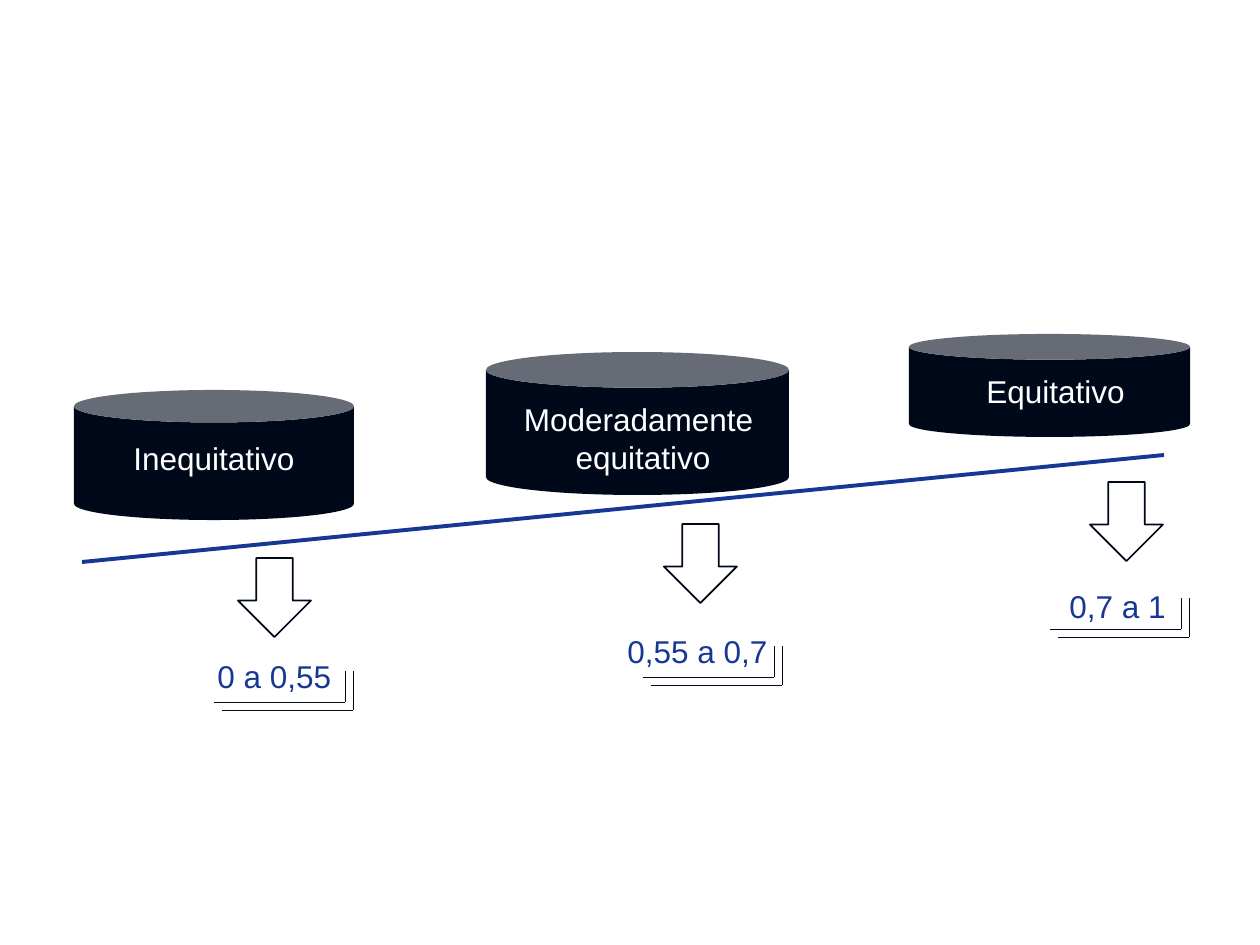
from lxml.etree import SubElement
from pptx import Presentation
from pptx.dml.color import RGBColor
from pptx.enum.shapes import MSO_CONNECTOR as CONNECTOR, MSO_SHAPE as SHAPE
from pptx.enum.text import MSO_ANCHOR as ANCHOR, PP_ALIGN as ALIGN
from pptx.oxml.ns import qn
from pptx.util import Pt

SCALE = 914400 / 126
NAVY = RGBColor(0x00, 0x09, 0x1A)
BLUE = RGBColor(0x16, 0x37, 0x94)
WHITE = RGBColor(0xFF, 0xFF, 0xFF)

presentation = Presentation()
presentation.slide_width = round(1260 * SCALE)
presentation.slide_height = round(945 * SCALE)
slide = presentation.slides.add_slide(presentation.slide_layouts[6])


def add_text(box, lines, color, align, wrap=True):
    text_box = slide.shapes.add_textbox(*[round(px * SCALE) for px in box])
    frame = text_box.text_frame
    frame.word_wrap = wrap
    frame.vertical_anchor = ANCHOR.TOP
    frame.text = "\n".join(lines)
    for paragraph in frame.paragraphs:
        paragraph.alignment = align
        paragraph.font.name = "Arial"
        paragraph.font.size = Pt(18)
        paragraph.font.color.rgb = color


def add_line(ends, color, width):
    line = slide.shapes.add_connector(
        CONNECTOR.STRAIGHT, *[round(px * SCALE) for px in ends])
    line.line.color.rgb = color
    line.line.width = Pt(width)
    SubElement(line._element.spPr, qn("a:effectLst"))


cans = [(909, 334, 281, 103), (486, 352, 303, 143), (74, 390, 280, 130)]
for box in cans:
    can = slide.shapes.add_shape(SHAPE.CAN, *[round(px * SCALE) for px in box])
    can.shadow.inherit = False
    can.fill.solid()
    can.fill.fore_color.rgb = NAVY
    can.line.fill.background()

levels = [
    ((120, 433, 188, 50), ["Inequitativo"], False),
    ((973, 366, 165, 50), ["Equitativo"], False),
    ((510, 394, 266, 89), ["Moderadamente ", "equitativo"], True),
]
for box, lines, wrap in levels:
    add_text(box, lines, WHITE, ALIGN.CENTER, wrap)

add_line((82, 562, 1164, 455), BLUE, 2.25)

for left, top in [(238, 558), (664, 524), (1090, 482)]:
    arrow = slide.shapes.add_shape(
        SHAPE.DOWN_ARROW, *[round(px * SCALE) for px in (left, top, 73, 79)])
    arrow.shadow.inherit = False
    arrow.fill.solid()
    arrow.fill.fore_color.rgb = WHITE
    arrow.line.color.rgb = NAVY
    arrow.line.width = Pt(1)

ranges = [
    ("0 a 0,55", (205, 651, 170, 50), 345, 702),
    ("0,55 a 0,7", (615, 626, 189, 50), 774, 677),
    ("0,7 a 1", (1057, 581, 170, 50), 1181, 629),
]
for text, box, corner_x, corner_y in ranges:
    add_text(box, [text], BLUE, ALIGN.LEFT)
    for offset in (0, 8):
        x, y = corner_x + offset, corner_y + offset
        add_line((x - 131, y, x, y), NAVY, 0.5)
        add_line((x, y, x, corner_y - 31), NAVY, 0.5)

presentation.save("out.pptx")
